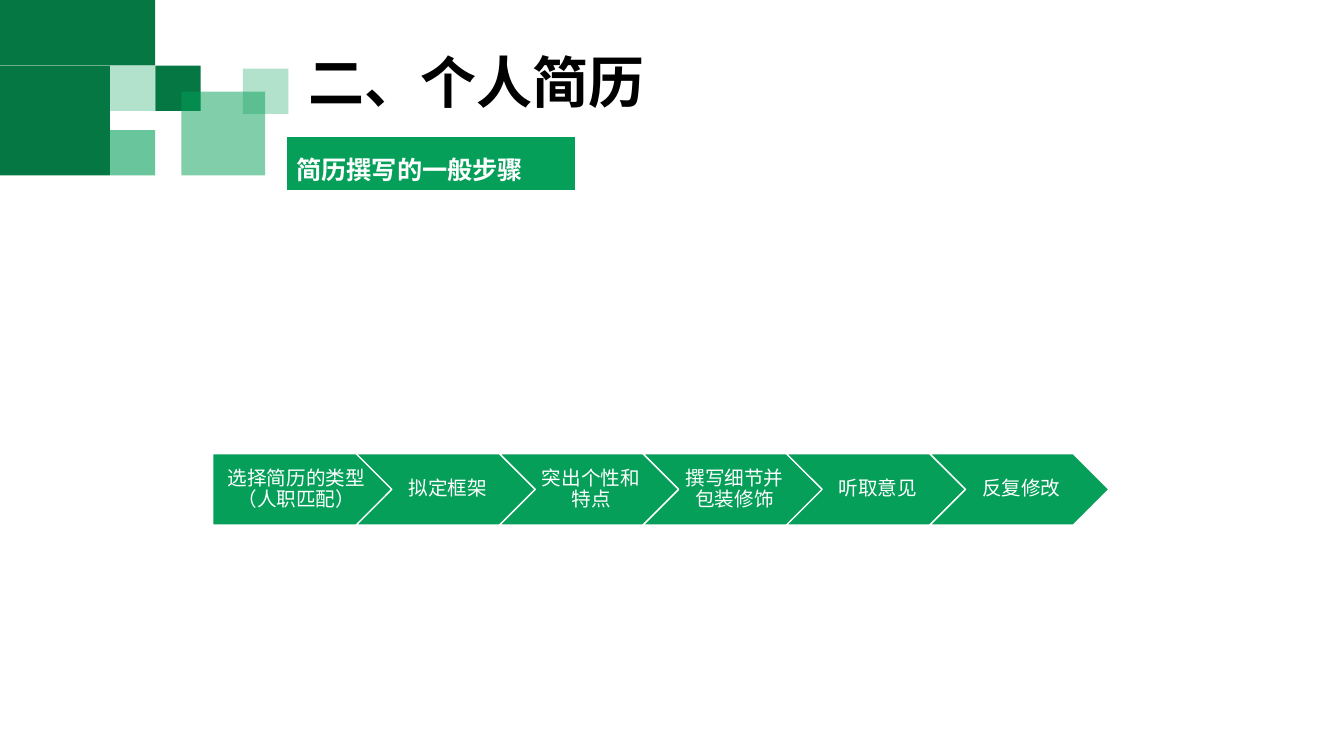
from lxml import etree
from pptx import Presentation
from pptx.dml.color import RGBColor
from pptx.enum.shapes import MSO_SHAPE
from pptx.enum.text import MSO_ANCHOR, PP_ALIGN
from pptx.oxml.ns import qn
from pptx.util import Inches, Pt

RECT, PENTAGON, CHEVRON = MSO_SHAPE.RECTANGLE, MSO_SHAPE.PENTAGON, MSO_SHAPE.CHEVRON
MIDDLE = MSO_ANCHOR.MIDDLE
CENTER, JUSTIFY, LEFT = PP_ALIGN.CENTER, PP_ALIGN.JUSTIFY, PP_ALIGN.LEFT

DARK_GREEN = RGBColor(0x04, 0x77, 0x43)
GREEN = RGBColor(0x05, 0x9F, 0x59)
WHITE = RGBColor(0xFF, 0xFF, 0xFF)
BLACK = RGBColor(0x00, 0x00, 0x00)

LATIN_FONT = "Calibri"
CJK_FONT = "Noto Sans CJK SC"

STEPS = ["选择简历的类型（人职匹配）", "拟定框架", "突出个性和特点",
         "撰写细节并包装修饰", "听取意见", "反复修改"]


def add_filled(slide, kind, x, y, w, h, color, opacity=100, outlined=False):
    sp = slide.shapes.add_shape(kind, Inches(x), Inches(y), Inches(w), Inches(h))
    sp.shadow.inherit = False
    sp.fill.solid()
    sp.fill.fore_color.rgb = color
    if opacity < 100:
        clr = sp.fill._xPr.find(qn("a:solidFill"))[0]
        etree.SubElement(clr, qn("a:alpha"), val=str(opacity * 1000))
    if outlined:
        sp.line.color.rgb = WHITE
        sp.line.width = Pt(1)
    else:
        sp.line.fill.background()
    return sp


def add_run(p, text, size, color, font=LATIN_FONT, bold=False):
    r = p.add_run()
    r.text = text
    r.font.size = Pt(size)
    r.font.bold = bold
    r.font.color.rgb = color
    r.font.name = font
    etree.SubElement(r.font._element, qn("a:ea"), typeface=CJK_FONT)


def add_corner_squares(slide, x, y):
    """Mosaic of green blocks in the top left corner."""
    small = 0.45
    blocks = [
        (0, 0.65, 1.09, 1.09, DARK_GREEN, 100),
        (0, 0, 1.54, 0.65, DARK_GREEN, 100),
        (1.09, 0.65, small, small, GREEN, 30),
        (1.54, 0.65, small, small, DARK_GREEN, 100),
        (1.09, 1.29, small, small, GREEN, 60),
        (1.8, 0.91, 0.83, 0.83, GREEN, 50),
        (2.41, 0.68, small, small, GREEN, 30),
    ]
    for dx, dy, w, h, color, opacity in blocks:
        add_filled(slide, RECT, x + dx, y + dy, w, h, color, opacity)


def add_title(slide, x, y, w, h):
    tf = slide.shapes.add_textbox(Inches(x), Inches(y), Inches(w), Inches(h)).text_frame
    tf.word_wrap = True
    p = tf.paragraphs[0]
    p.alignment = LEFT
    p.line_spacing = 0.9
    p.space_before = Pt(10)
    add_run(p, "二、个人简历", 40, BLACK, bold=True)


def add_subtitle(slide, x, y, w, h):
    """Green banner with its label near the bottom edge."""
    add_filled(slide, RECT, x, y, w, h, GREEN, outlined=True)
    tf = slide.shapes.add_textbox(Inches(x), Inches(y + 0.13), Inches(2.49), Inches(0.4)).text_frame
    tf.word_wrap = False
    p = tf.paragraphs[0]
    p.alignment = JUSTIFY
    add_run(p, "简历撰写的一般步骤", 18, WHITE, CJK_FONT, bold=True)


def add_process(slide, x, y, w, h):
    """Row of arrows, each overlapping the next by a fifth of its width."""
    step_w = w / (1 + 0.8 * (len(STEPS) - 1))
    for i, text in enumerate(STEPS):
        kind = CHEVRON if i else PENTAGON
        sp = add_filled(slide, kind, x + 0.8 * step_w * i, y, step_w, h, GREEN, outlined=True)
        tf = sp.text_frame
        tf.word_wrap = True
        tf.vertical_anchor = MIDDLE
        tf.margin_left = Inches(0.06 if i else 0.08)
        tf.margin_right = Inches(0.02)
        tf.margin_top = tf.margin_bottom = Inches(0.04)
        p = tf.paragraphs[0]
        p.alignment = CENTER
        p.line_spacing = 0.9
        add_run(p, text, 14, WHITE)


def main():
    prs = Presentation()
    prs.slide_width, prs.slide_height = Inches(13.33), Inches(7.5)
    slide = prs.slides.add_slide(prs.slide_layouts[6])
    add_corner_squares(slide, 0, 0)
    add_title(slide, 2.96, 0.5, 5.98, 2.76)
    add_subtitle(slide, 2.84, 1.35, 2.87, 0.54)
    add_process(slide, 2.11, 4.5, 8.89, 0.71)
    prs.save("out.pptx")


if __name__ == "__main__":
    main()
